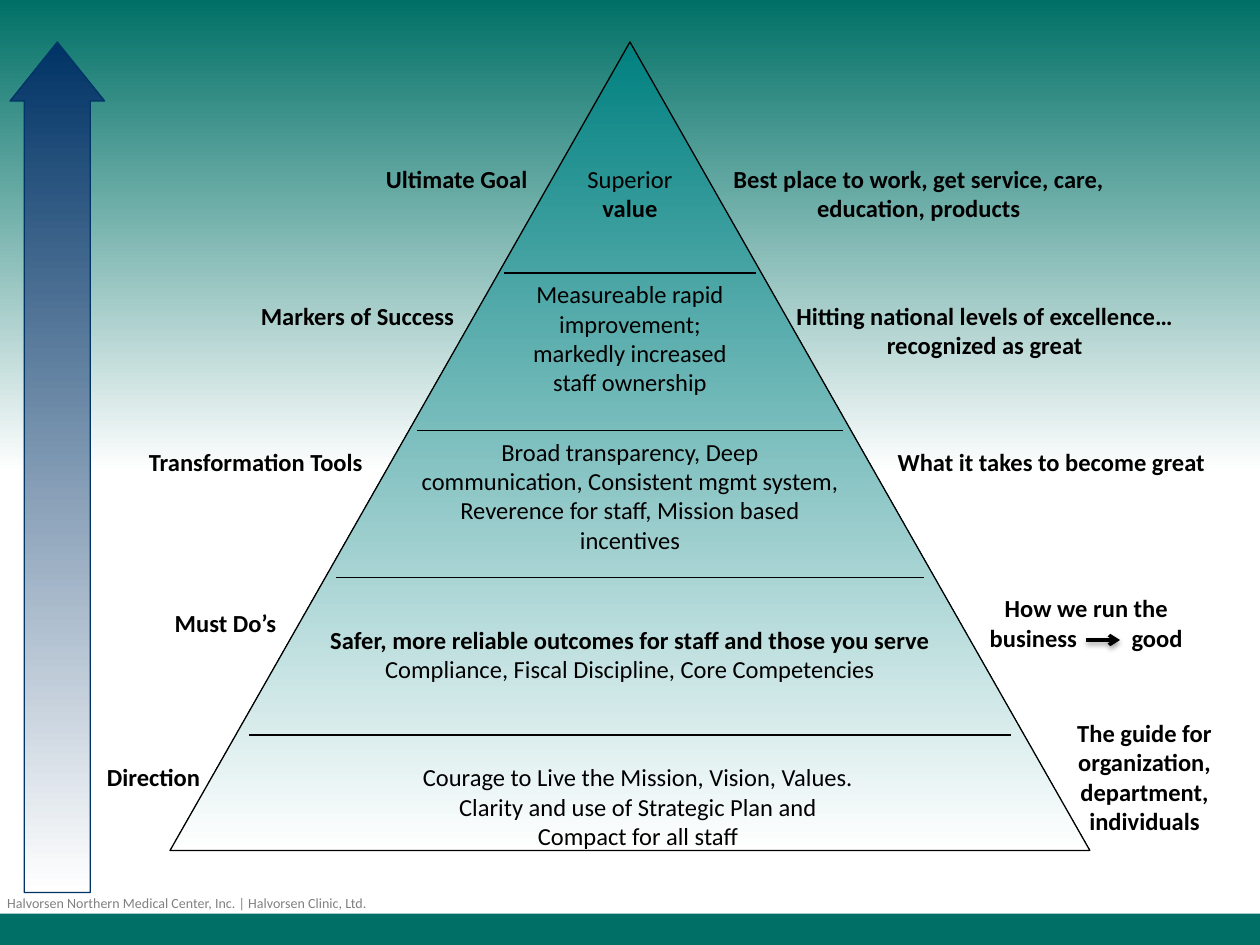
from lxml import etree
from pptx import Presentation
from pptx.dml.color import RGBColor
from pptx.enum.shapes import MSO_CONNECTOR as Connector, MSO_SHAPE as Preset
from pptx.enum.text import PP_ALIGN as Align
from pptx.oxml import parse_xml
from pptx.oxml.ns import nsdecls, qn
from pptx.util import Pt

COLORS = {"teal": "007066", "pyramid": "008080", "navy": "003366",
          "white": "FFFFFF", "black": "000000", "gray": "808080"}
CENTER_X = 360


def rgb(name):
    return RGBColor.from_string(COLORS[name])


class SlideBuilder:
    font = "Calibri"
    size = 14

    def __init__(self, slide):
        self.slide = slide

    def gradient(self, fill, top, end=1.0):
        """Fade downwards from a colour to white."""
        fill.gradient()
        fill.gradient_angle = 270
        for stop, color, position in zip(fill.gradient_stops, (top, "white"), (0, end)):
            stop.color.rgb = rgb(color)
            stop.position = position

    def shape(self, preset, box, color, outline=None, adjustments=()):
        """Outlined shapes fade to white; the others are plain."""
        shape = self.slide.shapes.add_shape(preset, *map(Pt, box))
        shape.shadow.inherit = False
        for index, value in enumerate(adjustments):
            shape.adjustments[index] = value
        if outline:
            self.gradient(shape.fill, color)
            shape.line.color.rgb = rgb(outline)
            shape.line.width = Pt(0.75)
        else:
            shape.fill.solid()
            shape.fill.fore_color.rgb = rgb(color)
            shape.line.fill.background()

    def line(self, x1, x2, y, width=0.75):
        line = self.slide.shapes.add_connector(
            Connector.STRAIGHT, Pt(x1), Pt(y), Pt(x2), Pt(y))
        line.line.color.rgb = rgb("black")
        line.line.width = Pt(width)
        effects = etree.SubElement(line._element.spPr, qn("a:effectLst"))
        return line, effects

    def arrow(self, x1, x2, y):
        arrow, effects = self.line(x1, x2, y, 2)
        etree.SubElement(arrow.line._get_or_add_ln(), qn("a:tailEnd"), type="arrow")
        effects.append(parse_xml(
            f'<a:outerShdw {nsdecls("a")} blurRad="{Pt(3.1)}" dist="{Pt(1.6)}" '
            f'dir="5400000" rotWithShape="0"><a:srgbClr val="{COLORS["black"]}">'
            '<a:alpha val="38000"/></a:srgbClr></a:outerShdw>'))

    def text(self, box, paragraphs, align=Align.CENTER, size=size,
             color="black", wrap=True):
        """Each paragraph is a list of (text, bold) runs."""
        frame = self.slide.shapes.add_textbox(*map(Pt, box)).text_frame
        frame.word_wrap = wrap
        for index, runs in enumerate(paragraphs):
            para = frame.paragraphs[0] if index == 0 else frame.add_paragraph()
            para.alignment = align
            para.font.name = self.font
            para.font.size = Pt(size)
            para.font.color.rgb = rgb(color)
            for words, bold in runs:
                run = para.add_run()
                run.text = words
                run.font.bold = bold
        return frame

    def tab_stops(self, para, positions):
        tabs = parse_xml(f'<a:tabLst {nsdecls("a")}/>')
        for position in positions:
            etree.SubElement(tabs, qn("a:tab"), pos=str(Pt(position)), algn="l")
        props = para._p.get_or_add_pPr()
        props.insert(0, tabs)


def main():
    prs = Presentation()
    prs.slide_width, prs.slide_height = Pt(720), Pt(540)
    builder = SlideBuilder(prs.slides.add_slide(prs.slide_layouts[6]))

    # Background and footer
    builder.gradient(builder.slide.background.fill, "teal", 0.5)
    builder.shape(Preset.RECTANGLE, (0, 522, 720, 18), "teal")
    builder.text((-3, 507.6, 229, 17),
                 [[("Halvorsen Northern Medical Center, Inc. | Halvorsen Clinic, Ltd.", False)]],
                 Align.LEFT, 8, "gray", wrap=False)

    # Rising arrow and pyramid with its dividers
    builder.shape(Preset.UP_ARROW, (5.75, 24, 54, 486), "navy", "navy", (0.698, 0.624))
    builder.shape(Preset.ISOSCELES_TRIANGLE, (97.2, 24, 525.6, 462), "pyramid", "black")
    for half_width, y in ((72, 156), (121.5, 246), (168, 330), (217.75, 420)):
        builder.line(CENTER_X - half_width, CENTER_X + half_width, y)

    # Pyramid levels, top to bottom
    levels = [
        (90, 72, [[("Superior ", False), ("value", True)]]),
        (156, 144, [[("Measureable rapid improvement; markedly increased "
                      "staff ownership", False)]]),
        (246, 253.4, [[("Broad transparency, Deep communication, Consistent mgmt "
                        "system, Reverence for staff, Mission based incentives", False)]]),
        (353.6, 366, [[("Safer, more reliable outcomes for staff and those you serve", True)],
                      [("Compliance, Fiscal Discipline, Core Competencies", False)]]),
        (432, 446, [[("Courage to Live the Mission, Vision, Values.", False)],
                    [("Clarity and use of Strategic Plan and", False)],
                    [("Compact for all staff", False)]]),
    ]
    for top, width, paragraphs in levels:
        left = CENTER_X - width / 2 + (4.6 if top == 432 else 0) + (
            2.8 if top == 246 else 0) * -1 + (2.8 if top == 246 else 0)
        builder.text((left, top, width, 41), paragraphs)

    # Level names on the left
    names = [("Ultimate Goal", 213.5, 90, 108), ("Markers of Success", 142, 168.5, 138),
             ("Transformation Tools", 78, 252, 138), ("Must Do’s", 92.75, 343.75, 78),
             ("Direction", 54, 432, 72)]
    for name, left, top, width in names:
        builder.text((left, top, width, 24.25), [[(name, True)]], Align.LEFT)

    # Explanations on the right
    notes = [
        ("Best place to work, get service, care, education, products", 396, 90, 258),
        ("Hitting national levels of excellence…recognized as great", 439.75, 168.5, 246),
        ("What it takes to become great", 498.75, 252, 204),
        ("The guide for organization, department, individuals", 591, 406.75, 126),
    ]
    for note, left, top, width in notes:
        builder.text((left, top, width, 41), [[(note, True)]])

    # Business to good, with the arrow in the gap between the tab stops
    journey = builder.text((546.5, 335.5, 148.5, 41),
                           [[("How we run the", True)], [("\tbusiness\tgood", True)]])
    journey.paragraphs[1].alignment = Align.LEFT
    builder.tab_stops(journey.paragraphs[1], (12, 93))
    builder.arrow(620.75, 640, 365.75)

    prs.save("out.pptx")


if __name__ == "__main__":
    main()
